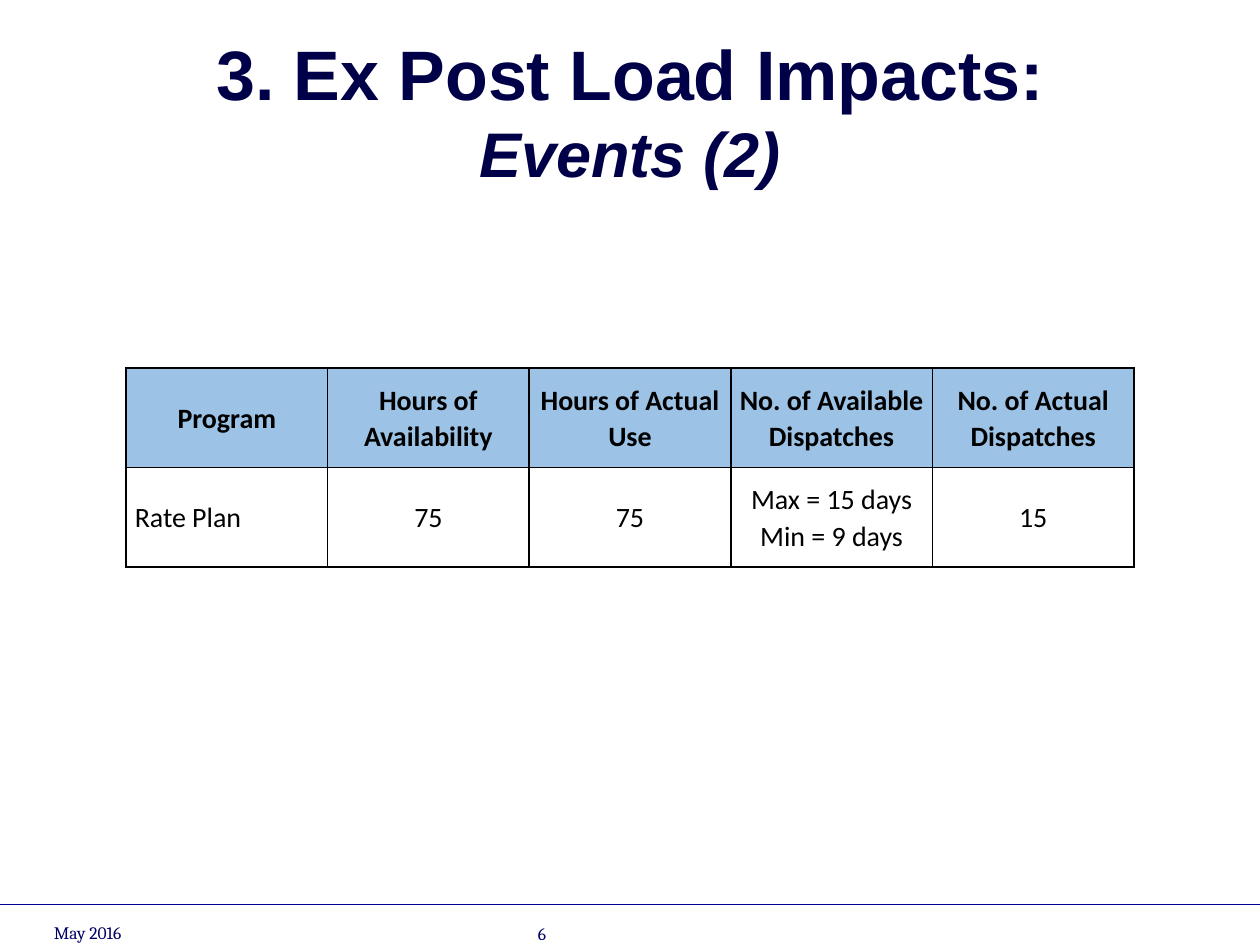
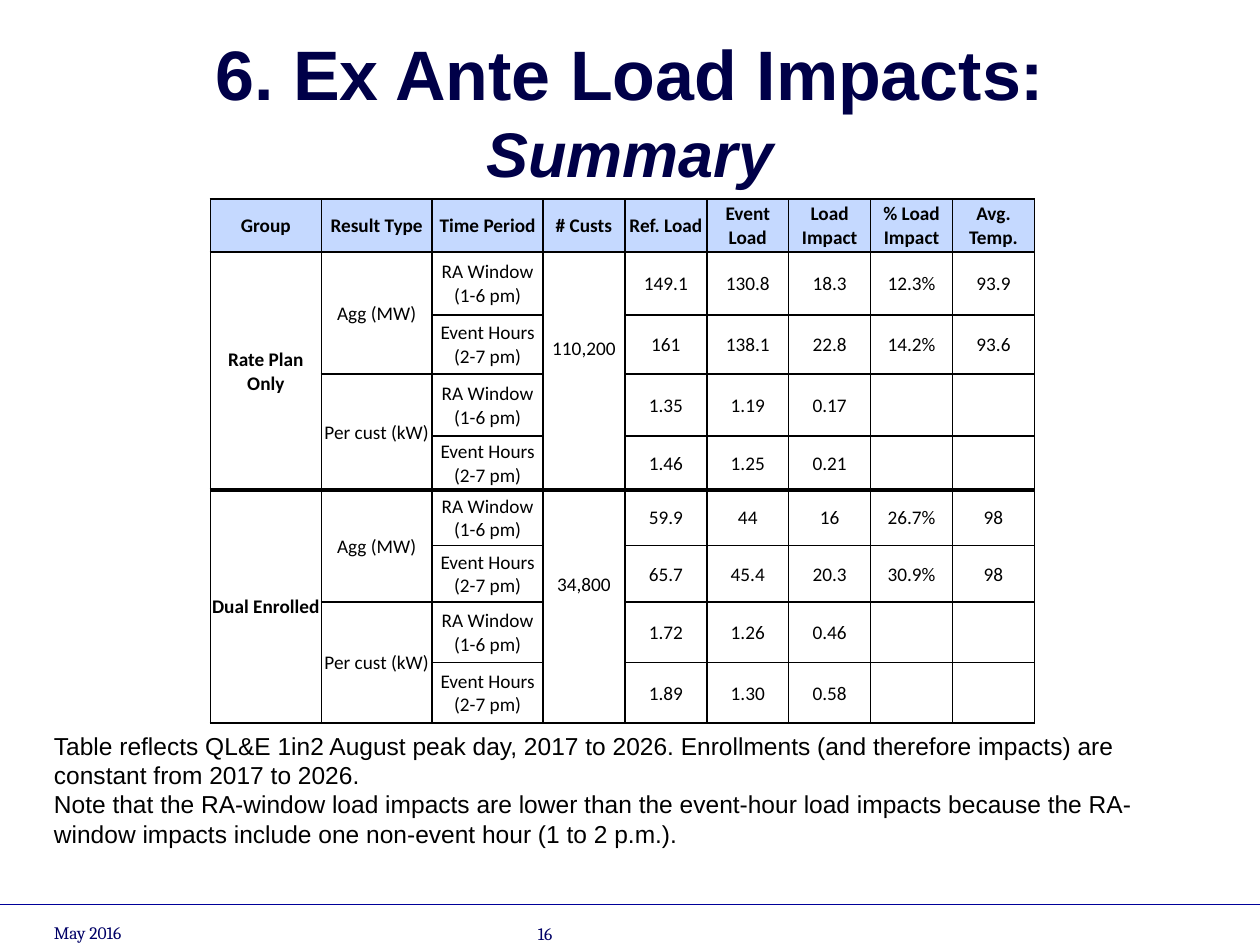
"""Build two load impact slides with shared titles, footers and table styling."""
from copy import deepcopy

from lxml import etree
from pptx import Presentation
from pptx.dml.color import RGBColor
from pptx.enum import shapes, text
from pptx.oxml import ns
from pptx.util import Inches, Pt

NAVY, FOOTER_BLUE, RULE_BLUE, BLACK = "000048", "000066", "000099", "000000"
TITLE_FONT, TABLE_FONT, FOOTER_FONT = "Arial", "Calibri", "Cambria"
CENTER, LEFT = text.PP_ALIGN.CENTER, text.PP_ALIGN.LEFT

DISPATCH_ROWS = [
    ["Program", "Hours of Availability", "Hours of Actual Use",
     "No. of Available Dispatches", "No. of Actual Dispatches"],
    ["Rate Plan", "75", "75", "Max = 15 days\nMin = 9 days", "15"],
]
SUMMARY_HEADER = ["Group", "Result Type", "Time Period", "# Custs", "Ref. Load",
                  "Event Load", "Load Impact", "% Load Impact", "Avg. Temp."]
RESULT_TYPES = ["Agg (MW)", "Per cust (kW)"]
TIME_PERIODS = ["RA Window (1-6 pm)", "Event Hours (2-7 pm)"]
GROUPS = [
    ("Rate Plan Only", "110,200", [
        ["149.1", "130.8", "18.3", "12.3%", "93.9"],
        ["161", "138.1", "22.8", "14.2%", "93.6"],
        ["1.35", "1.19", "0.17", "", ""],
        ["1.46", "1.25", "0.21", "", ""]]),
    ("Dual Enrolled", "34,800", [
        ["59.9", "44", "16", "26.7%", "98"],
        ["65.7", "45.4", "20.3", "30.9%", "98"],
        ["1.72", "1.26", "0.46", "", ""],
        ["1.89", "1.30", "0.58", "", ""]]),
]
NOTES = [
    "Table reflects QL&E 1in2 August peak day, 2017 to 2026. Enrollments "
    "(and therefore impacts) are constant from 2017 to 2026.",
    "Note that the RA-window load impacts are lower than the event-hour load impacts "
    "because the RA-window impacts include one non-event hour (1 to 2 p.m.).",
]


def color(value):
    """Turn a hex string into a colour."""
    return RGBColor.from_string(value)


def add_run(paragraph, words, font, size, fill, bold=False, italic=False):
    """Append one formatted run."""
    run = paragraph.add_run()
    run.text = words
    run.font.name, run.font.size = font, Pt(size)
    run.font.bold, run.font.italic = bold, italic
    run.font.color.rgb = color(fill)
    return run


def add_paragraphs(frame, lines, font, size, fill, bold=False, align=LEFT, spacing=None):
    """Fill a text frame with one paragraph per line."""
    for index, line in enumerate(lines):
        paragraph = frame.add_paragraph() if index else frame.paragraphs[0]
        paragraph.alignment = align
        paragraph.line_spacing = spacing
        add_run(paragraph, line, font, size, fill, bold)


def add_text(slide, box, lines, font, size, fill, anchor=text.MSO_ANCHOR.TOP):
    """Add a wrapped text box."""
    frame = slide.shapes.add_textbox(*map(Inches, box)).text_frame
    frame.word_wrap = True
    frame.vertical_anchor = anchor
    add_paragraphs(frame, lines, font, size, fill)


def add_title(slide, heading, subheading):
    """Set the two-line title in its placeholder."""
    title = slide.shapes.title
    title.left, title.top, title.width, title.height = map(Inches, (0.5, 0.25, 9, 1.25))
    frame = title.text_frame
    frame.auto_size = text.MSO_AUTO_SIZE.NONE
    frame.vertical_anchor = text.MSO_ANCHOR.MIDDLE
    paragraph = frame.paragraphs[0]
    paragraph.alignment = CENTER
    heading_run = add_run(paragraph, heading, TITLE_FONT, 40, NAVY, bold=True)
    paragraph.add_line_break()
    line_break = paragraph._p.find(ns.qn("a:br"))
    line_break.append(deepcopy(heading_run._r.find(ns.qn("a:rPr"))))
    add_run(paragraph, subheading, TITLE_FONT, 36, NAVY, bold=True, italic=True)


def add_footer(slide, number):
    """Add the footer rule, date and page number."""
    rule = slide.shapes.add_connector(
        shapes.MSO_CONNECTOR.STRAIGHT, 0, Inches(7.18), Inches(10), Inches(7.18))
    rule.line.color.rgb = color(RULE_BLUE)
    rule.line.width = Pt(0.75)
    etree.SubElement(rule._element.spPr, ns.qn("a:effectLst"))
    for left, top, words in ((0.33, 7.01, "May 2016"), (4.17, 7.02, number)):
        add_text(slide, (left, top, 2.33, 0.52), [words], FOOTER_FONT, 10,
                 FOOTER_BLUE, text.MSO_ANCHOR.BOTTOM)


def set_borders(cell, top, bottom):
    """Give a cell black borders with the given top and bottom widths."""
    properties = cell._tc.get_or_add_tcPr()
    for side, width in (("L", 1), ("R", 1), ("T", top), ("B", bottom)):
        line = etree.SubElement(properties, ns.qn(f"a:ln{side}"), w=str(Pt(width)))
        fill = etree.SubElement(line, ns.qn("a:solidFill"))
        etree.SubElement(fill, ns.qn("a:srgbClr"), val=BLACK)


def add_table(slide, left, top, widths, heights, rows, header_fill, size, insets,
              merges=(), bold_columns=(), heavy_edges=(), spacing=None):
    """Add a bordered table; merges list (row, column, row count)."""
    box = map(Inches, (left, top, sum(widths), sum(heights)))
    table = slide.shapes.add_table(len(rows), len(widths), *box).table
    table.first_row = table.horz_banding = False
    for column, width in zip(table.columns, widths):
        column.width = Inches(width)
    for row, height in zip(table.rows, heights):
        row.height = Inches(height)
    for row, column, count in merges:
        table.cell(row, column).merge(table.cell(row + count - 1, column))
    for row, values in enumerate(rows):
        for column, value in enumerate(values):
            cell = table.cell(row, column)
            end = row + (cell.span_height if cell.is_merge_origin else 1)
            set_borders(cell, *(2 if edge in heavy_edges else 1 for edge in (row, end)))
            cell.vertical_anchor = text.MSO_ANCHOR.MIDDLE
            cell.margin_left = cell.margin_right = Inches(insets[0])
            cell.margin_top, cell.margin_bottom = Inches(insets[1]), 0
            if row == 0:
                cell.fill.solid()
                cell.fill.fore_color.rgb = color(header_fill)
            else:
                cell.fill.background()
            if value:
                add_paragraphs(cell.text_frame, value.split("\n"), TABLE_FONT, size, BLACK,
                               row == 0 or column in bold_columns, CENTER, spacing)
    return table


def summary_rows():
    """Lay out the group results, with labels only where they start."""
    rows = [SUMMARY_HEADER]
    for group, customers, results in GROUPS:
        for index, values in enumerate(results):
            rows.append(["" if index else group,
                         "" if index % 2 else RESULT_TYPES[index // 2],
                         TIME_PERIODS[index % 2],
                         "" if index else customers, *values])
    return rows


def add_slide(presentation, heading, subheading, number):
    """Add a slide with the shared title and footer."""
    slide = presentation.slides.add_slide(presentation.slide_layouts[5])
    add_footer(slide, number)
    add_title(slide, heading, subheading)
    return slide


def main():
    """Build and save the presentation."""
    presentation = Presentation()
    presentation.slide_width, presentation.slide_height = Inches(10), Inches(7.5)

    events = add_slide(presentation, "3. Ex Post Load Impacts:", "Events (2)", "6")
    dispatches = add_table(events, 1, 2.92, [1.6] * 5, [0.79] * 2, DISPATCH_ROWS,
                           "9CC2E5", 16, (0.07, 0), spacing=1.07)
    dispatches.cell(1, 0).text_frame.paragraphs[0].alignment = LEFT

    summary = add_slide(presentation, "6. Ex Ante Load Impacts:", "Summary", "16")
    add_text(summary, (0.33, 5.75, 9.17, 1.04), NOTES, TITLE_FONT, 14, BLACK)
    group_starts = (1, 5)
    merges = [(row, column, 4) for row in group_starts for column in (0, 3)]
    merges += [(row, 1, 2) for row in range(1, 9, 2)]
    heights = [0.42, 0.5, 0.47, 0.49, 0.43, 0.44, 0.45, 0.48, 0.48]
    results = add_table(summary, 1.67, 1.58, [0.88] * 3 + [0.65] * 6, heights,
                        summary_rows(), "C5D9FF", 11, (0, 0.01), merges,
                        bold_columns=(0,), heavy_edges=(5,))
    for row in group_starts:
        results.cell(row, 3).margin_bottom = Inches(0.36)

    presentation.save("out.pptx")


if __name__ == "__main__":
    main()
